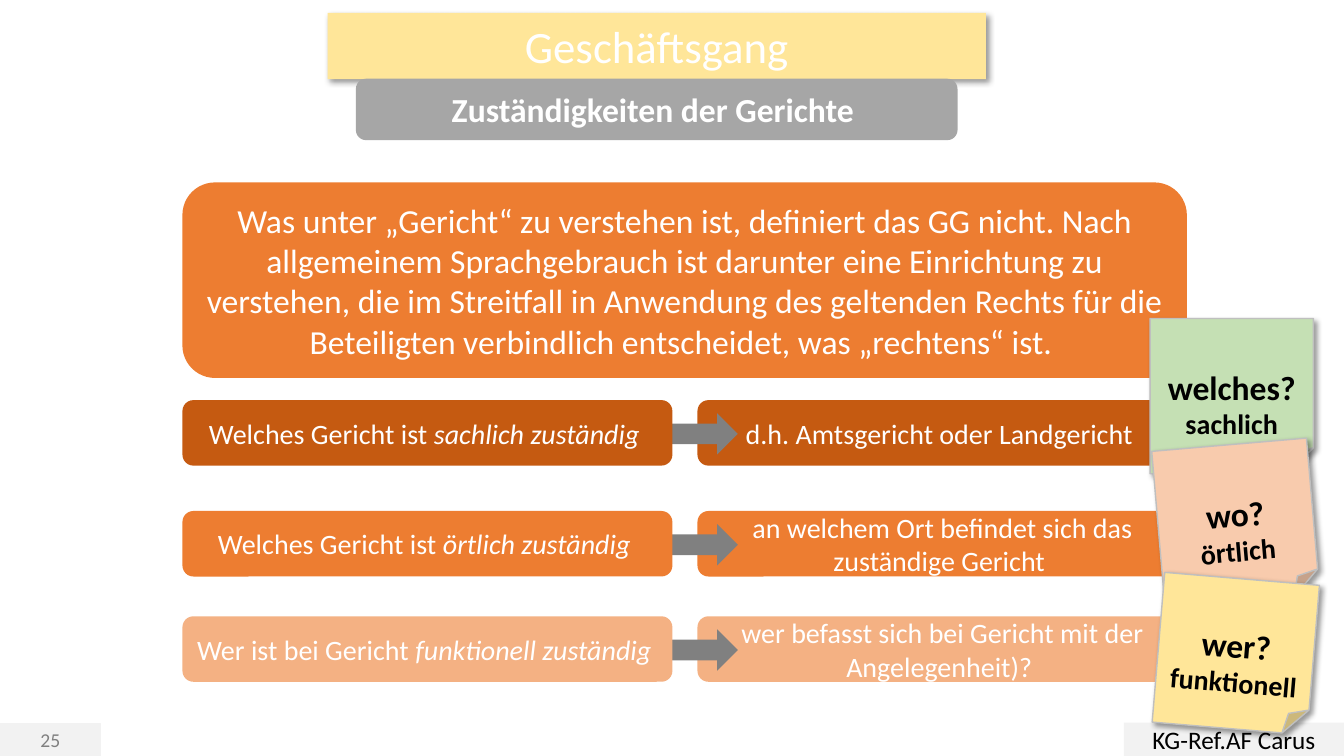
import pptx
import pptx.dml.color
import pptx.enum.shapes
import pptx.enum.text
import pptx.oxml
import pptx.oxml.ns
import pptx.util

Pt = pptx.util.Pt
RGBColor = pptx.dml.color.RGBColor
Preset = pptx.enum.shapes.MSO_SHAPE

WHITE = RGBColor(0xFF, 0xFF, 0xFF)
BLACK = RGBColor(0x00, 0x00, 0x00)
ORANGE = RGBColor(0xED, 0x7D, 0x31)
DARK_ORANGE = RGBColor(0xC5, 0x5A, 0x11)
LIGHT_ORANGE = RGBColor(0xF4, 0xB1, 0x83)
YELLOW = RGBColor(0xFF, 0xE6, 0x99)
GREEN = RGBColor(0xC5, 0xE0, 0xB4)
PEACH = RGBColor(0xF8, 0xCB, 0xAD)
SILVER = RGBColor(0xA6, 0xA6, 0xA6)
GREY = RGBColor(0x80, 0x80, 0x80)
PALE_GREY = RGBColor(0xF2, 0xF2, 0xF2)
EDGE_GREY = RGBColor(0xBF, 0xBF, 0xBF)

LEFT_COLUMN, RIGHT_COLUMN, ARROW_LEFT = 130.3, 498.2, 468.7
ROW_WIDTH, ROW_HEIGHT = 350, 46.8
ARROW_WIDTH, ARROW_HEIGHT = 58.3, 29.5

ROWS = [
    (285.8, DARK_ORANGE, "Welches Gericht ist ", "sachlich zuständig ",
     "d.h. Amtsgericht oder Landgericht "),
    (365, ORANGE, "Welches Gericht ist ", "örtlich zuständig ",
     "an welchem Ort befindet sich das zuständige Gericht "),
    (440.2, LIGHT_ORANGE, "Wer ist bei Gericht ", "funktionell zuständig ",
     "wer befasst sich bei Gericht mit der Angelegenheit)? "),
]

NOTES = [
    ((821.5, 227.5, 116.6, 110.9), 0, GREEN, "welches?", "sachlich"),
    ((827.3, 317.5, 110.9, 112.3), -4.9, PEACH, "wo?", "örtlich"),
    ((827.3, 413.3, 110.9, 107.3), 4.8, YELLOW, "wer?", "funktionell"),
]

SHADOW = (
    '<a:outerShdw %s blurRad="50800" dist="38100" dir="2700000" algn="tl" '
    'rotWithShape="0"><a:srgbClr val="000000"><a:alpha val="40000"/>'
    '</a:srgbClr></a:outerShdw>' % pptx.oxml.ns.nsdecls("a")
)
ROUNDED = (
    '<a:prstGeom %s prst="roundRect"><a:avLst/></a:prstGeom>'
    % pptx.oxml.ns.nsdecls("a")
)


class Painter:
    font = "Calibri"

    def __init__(self, page):
        self.page = page

    def paint(self, box, color, edge=None, shadow=False):
        box.fill.solid()
        box.fill.fore_color.rgb = color
        if edge is None:
            box.line.fill.background()
        else:
            box.line.color.rgb = edge
            box.line.width = Pt(1)
        box.shadow.inherit = False
        if shadow:
            effects = box._element.spPr.find(pptx.oxml.ns.qn("a:effectLst"))
            effects.append(pptx.oxml.parse_xml(SHADOW))

    def shape(self, preset, place, color, edge=None, shadow=False):
        box = self.page.shapes.add_shape(preset, *map(Pt, place))
        self.paint(box, color, edge, shadow)
        return box

    def add_text(self, box, paragraphs, color=WHITE):
        frame = box.text_frame
        frame.word_wrap = True
        frame.auto_size = pptx.enum.text.MSO_AUTO_SIZE.NONE
        frame.vertical_anchor = pptx.enum.text.MSO_ANCHOR.MIDDLE
        for index, spans in enumerate(paragraphs):
            para = frame.add_paragraph() if index else frame.paragraphs[0]
            para.alignment = pptx.enum.text.PP_ALIGN.CENTER
            for text, size, bold, italic in spans:
                span = para.add_run()
                span.text = text
                span.font.name = self.font
                span.font.size = Pt(size)
                span.font.bold = bold
                span.font.italic = italic
                span.font.color.rgb = color

    def title(self, text, place, color):
        box = self.page.shapes.title
        box.left, box.top, box.width, box.height = map(Pt, place)
        box._element.spPr.append(pptx.oxml.parse_xml(ROUNDED))
        self.paint(box, color, shadow=True)
        self.add_text(box, [[(text, 32, False, False)]])

    def panel(self, text, place, color, size=24, bold=False):
        box = self.shape(Preset.ROUNDED_RECTANGLE, place, color)
        self.add_text(box, [[(text, size, bold, False)]])

    def footer(self, text, place, size, color, edge=None):
        box = self.shape(Preset.RECTANGLE, place, PALE_GREY, edge)
        self.add_text(box, [[(text, size, False, False)]], color)

    def row(self, top, color, question, emphasis, answer):
        self.panel(answer, (RIGHT_COLUMN, top, ROW_WIDTH, ROW_HEIGHT), color, 20)
        arrow_top = top + (ROW_HEIGHT - ARROW_HEIGHT) / 2 + 0.7
        self.shape(Preset.RIGHT_ARROW,
                   (ARROW_LEFT, arrow_top, ARROW_WIDTH, ARROW_HEIGHT), GREY)
        box = self.shape(Preset.ROUNDED_RECTANGLE,
                         (LEFT_COLUMN, top, ROW_WIDTH, ROW_HEIGHT), color)
        self.add_text(box, [[(question, 20, False, False),
                             (emphasis, 20, False, True)]])

    def note(self, place, angle, color, question, answer):
        box = self.shape(Preset.FOLDED_CORNER, place, color, EDGE_GREY, True)
        box.rotation = angle
        box.text_frame.margin_top = Pt(32.8)
        self.add_text(box, [[(question, 24, True, False)],
                            [(answer, 20, True, False)]], BLACK)


def main():
    deck = pptx.Presentation()
    deck.slide_width, deck.slide_height = Pt(960), Pt(540)
    painter = Painter(deck.slides.add_slide(deck.slide_layouts[5]))

    painter.title("Geschäftsgang", (234, 9.2, 470.2, 47.3), YELLOW)
    painter.footer("25", (0, 517, 72, 23), 14, GREY, PALE_GREY)
    painter.footer("KG-Ref.AF Carus", (802.8, 516.2, 157.2, 23.8), 18, BLACK)
    painter.panel(
        "Was unter „Gericht“ zu verstehen ist, definiert das GG nicht. "
        "Nach allgemeinem Sprachgebrauch ist darunter eine Einrichtung zu "
        "verstehen, die im Streitfall in Anwendung des geltenden Rechts für "
        "die Beteiligten verbindlich entscheidet, was „rechtens“ ist. ",
        (130.3, 130.3, 717.5, 139.7), ORANGE)
    painter.panel("Zuständigkeiten der Gerichte ",
                  (254.2, 56.2, 429.8, 43.9), SILVER, bold=True)
    for row in ROWS:
        painter.row(*row)
    for note in NOTES:
        painter.note(*note)

    deck.save("out.pptx")


if __name__ == "__main__":
    main()
